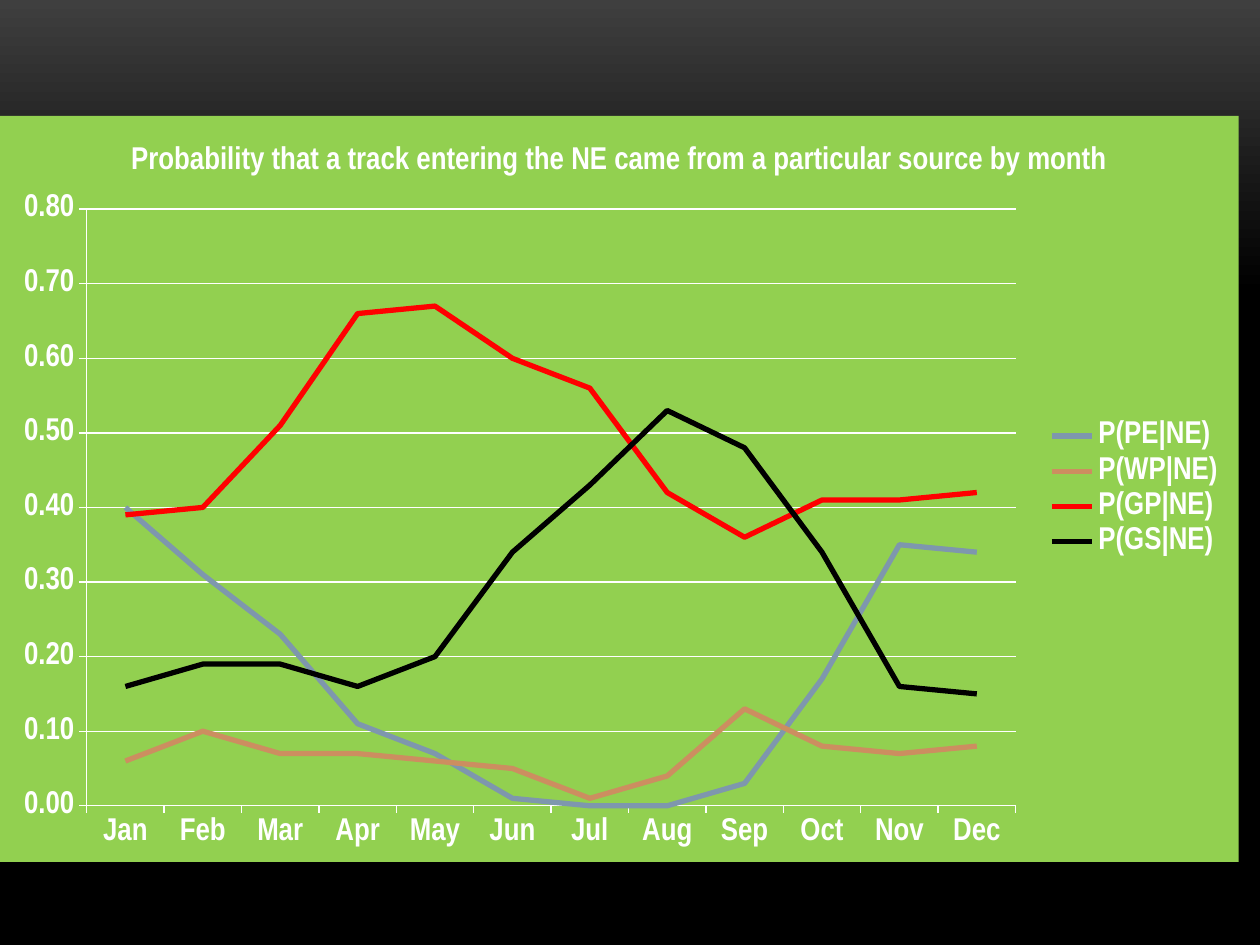
from lxml.etree import SubElement
from pptx import Presentation
from pptx.chart.data import CategoryChartData
from pptx.dml.color import RGBColor
from pptx.enum.chart import XL_CHART_TYPE, XL_LEGEND_POSITION, XL_TICK_MARK
from pptx.oxml import parse_xml
from pptx.oxml.ns import nsdecls, qn
from pptx.util import Inches, Pt

TITLE = "Probability that a track entering the NE came from a particular source by month"
MONTHS = ["Jan", "Feb", "Mar", "Apr", "May", "Jun", "Jul", "Aug", "Sep", "Oct", "Nov", "Dec"]
WHITE = RGBColor(0xFF, 0xFF, 0xFF)
BLACK = RGBColor(0, 0, 0)
CHARCOAL = RGBColor(0x3F, 0x3F, 0x3F)
GREEN = RGBColor(0x92, 0xD0, 0x50)
BLUE_GRAY = RGBColor(0x7E, 0x97, 0xAD)
TAN = RGBColor(0xCC, 0x8E, 0x60)
RED = RGBColor(0xFF, 0, 0)
SOURCES = [
    ("P(PE|NE)", BLUE_GRAY, [0.4, 0.31, 0.23, 0.11, 0.07, 0.01, 0, 0, 0.03, 0.17, 0.35, 0.34]),
    ("P(WP|NE)", TAN, [0.06, 0.1, 0.07, 0.07, 0.06, 0.05, 0.01, 0.04, 0.13, 0.08, 0.07, 0.08]),
    ("P(GP|NE)", RED, [0.39, 0.4, 0.51, 0.66, 0.67, 0.6, 0.56, 0.42, 0.36, 0.41, 0.41, 0.42]),
    ("P(GS|NE)", BLACK, [0.16, 0.19, 0.19, 0.16, 0.2, 0.34, 0.43, 0.53, 0.48, 0.34, 0.16, 0.15]),
]
PLOT_SHARES = {"x": 0.07, "y": 0.125, "w": 0.75, "h": 0.8}


def style_font(font):
    font.name = "Arial Narrow"
    font.size = Pt(18)
    font.bold = True
    font.color.rgb = WHITE


def style_line(line, color, width):
    line.color.rgb = color
    line.width = Pt(width)


def fill_chart(chart, color):
    chart.element.find(qn("c:chart")).addnext(parse_xml(
        f'<c:spPr {nsdecls("c", "a")}><a:solidFill><a:srgbClr val="{color}"/></a:solidFill>'
        '<a:ln><a:noFill/></a:ln></c:spPr>'))


def place_plot(chart, shares):
    area = chart.element.find(qn("c:chart")).find(qn("c:plotArea"))
    for old in area.findall(qn("c:layout")):
        area.remove(old)
    layout = parse_xml(f'<c:layout {nsdecls("c")}><c:manualLayout/></c:layout>')
    settings = {"layoutTarget": "inner", "xMode": "edge", "yMode": "edge", **shares}
    for tag, val in settings.items():
        SubElement(layout[0], qn(f"c:{tag}")).set("val", str(val))
    area.insert(0, layout)


prs = Presentation()
prs.slide_width, prs.slide_height = Inches(10), Inches(7.5)
s = prs.slides.add_slide(prs.slide_layouts[6])

bg = s.background.fill
bg.gradient()
bg.gradient_angle = 270
for stop, (pos, color) in zip(bg.gradient_stops, [(0, CHARCOAL), (0.31, BLACK)]):
    stop.position = pos
    stop.color.rgb = color

data = CategoryChartData(number_format="0.00")
data.categories = MONTHS
for name, _, vals in SOURCES:
    data.add_series(name, vals)
chart = s.shapes.add_chart(XL_CHART_TYPE.LINE, 0, Inches(0.92), Inches(9.83), Inches(5.92), data).chart
style_font(chart.font)
fill_chart(chart, GREEN)
place_plot(chart, PLOT_SHARES)

chart.has_title = True
tf = chart.chart_title.text_frame
tf.text = TITLE
style_font(tf.paragraphs[0].font)
chart.chart_title.include_in_layout = False

chart.has_legend = True
chart.legend.position = XL_LEGEND_POSITION.RIGHT
chart.legend.include_in_layout = False
style_font(chart.legend.font)

for axis in (chart.category_axis, chart.value_axis):
    style_font(axis.tick_labels.font)
    style_line(axis.format.line, WHITE, 0.75)
    axis.major_tick_mark = XL_TICK_MARK.OUTSIDE
    axis.minor_tick_mark = XL_TICK_MARK.NONE
values = chart.value_axis
values.minimum_scale, values.maximum_scale, values.major_unit = 0, 0.8, 0.1
values.tick_labels.number_format = "0.00"
values.tick_labels.number_format_is_linked = False
values.has_major_gridlines = True
style_line(values.major_gridlines.format.line, WHITE, 0.75)

plot = chart.plots[0]
plot.vary_by_categories = False
for series, (_, color, _) in zip(plot.series, SOURCES):
    series.smooth = False
    style_line(series.format.line, color, 3)

prs.save("out.pptx")
